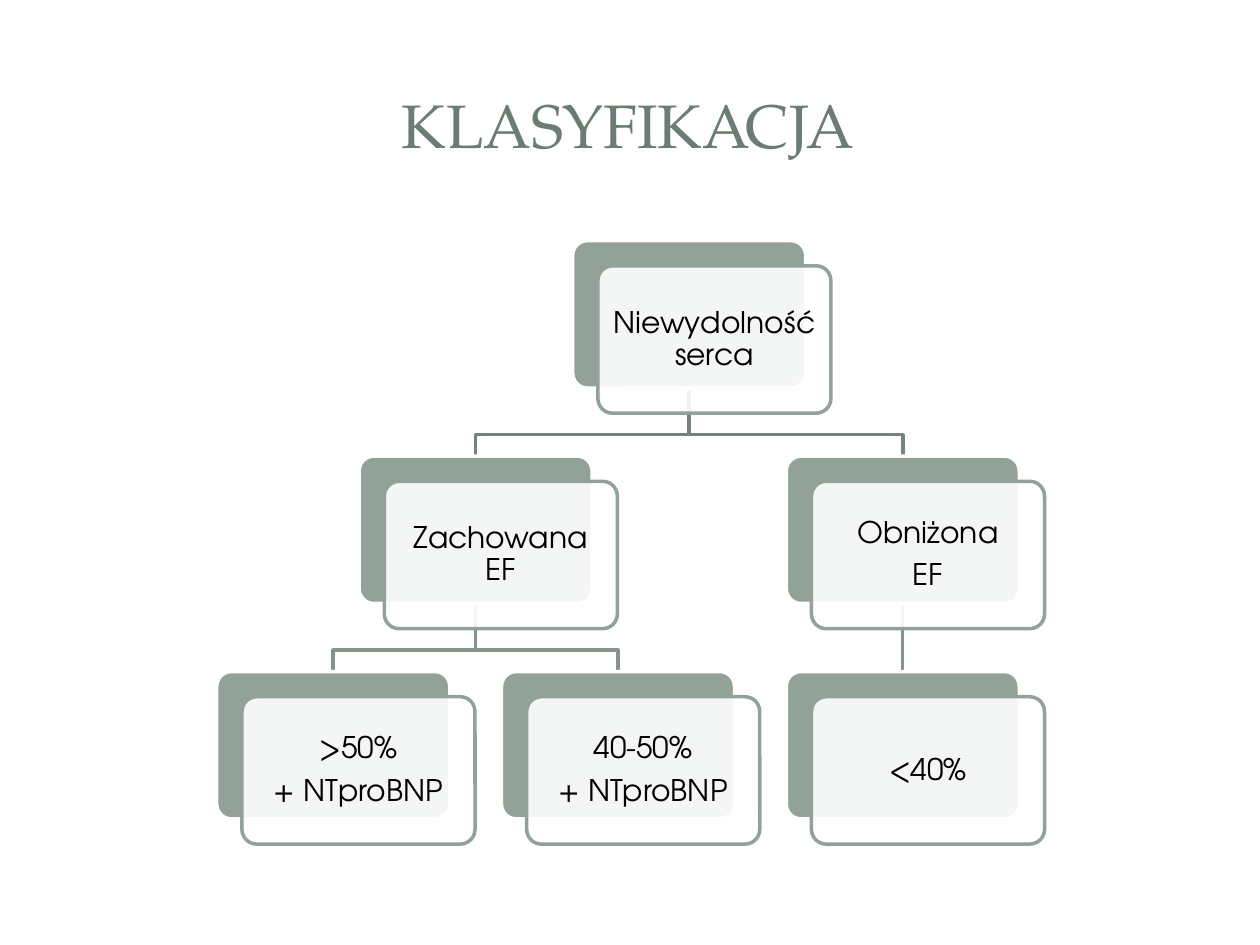
from lxml import etree
from pptx import Presentation
from pptx.dml.color import RGBColor
from pptx.enum.shapes import MSO_SHAPE
from pptx.enum.text import MSO_ANCHOR, PP_ALIGN
from pptx.oxml.ns import qn
from pptx.util import Inches, Pt

ROUNDED = MSO_SHAPE.ROUNDED_RECTANGLE
MIDDLE, CENTER = MSO_ANCHOR.MIDDLE, PP_ALIGN.CENTER

# Content: name -> (paragraphs, column, level, parent)
TITLE = "KLASYFIKACJA"
NODES = {
    "failure": (["Niewydolność serca"], 1.25, 0, None),
    "preserved": (["Zachowana EF"], 0.5, 1, "failure"),
    "over50": ([">50%", "+ NTproBNP"], 0, 2, "preserved"),
    "mid": (["40-50%", "+ NTproBNP"], 1, 2, "preserved"),
    "reduced": (["Obniżona", "EF"], 2, 1, "failure"),
    "under40": (["<40%"], 2, 2, "reduced"),
}

# Format
COLORS = {"title": "6B7D72", "card": "93A299", "white": "FFFFFF", "text": "000000"}
LINK_COLORS = {1: "76827B", 2: "85938B"}  # by level of the child
TITLE_FONT = {"name": "TeX Gyre Pagella", "size": Pt(35), "bold": False}
CARD_FONT = {"name": "TeX Gyre Adventor", "size": Pt(17)}
PARAGRAPH = {"alignment": CENTER, "line_spacing": 0.9,
             "space_before": Pt(0), "space_after": Pt(6)}
FRAME = {"word_wrap": True, "vertical_anchor": MIDDLE,
         **{f"margin_{side}": Inches(0.07) for side in ("left", "right", "top", "bottom")}}

# Grid, in inches
LEFT, TOP = 1.72, 1.91
COL_STEP, ROW_STEP = 2.26, 1.71
CARD_W, CARD_H = 1.85, 1.17
OFFSET = 0.2    # front card from back card
ELBOW = 0.17    # crossbar above the child


def rgb(name):
    return RGBColor.from_string(COLORS.get(name, name))


def apply(target, values):
    for key, value in values.items():
        setattr(target, key, value)


def place(name):
    _, column, level, _ = NODES[name]
    return LEFT + column * COL_STEP, TOP + level * ROW_STEP


def set_line(s, color):
    s.shadow.inherit = False
    s.line.color.rgb = rgb(color)
    s.line.width = Pt(2)


def add_text(tf, paragraphs, font, color):
    for i, text in enumerate(paragraphs):
        p = tf.paragraphs[0] if i == 0 else tf.add_paragraph()
        apply(p, PARAGRAPH)
        r = p.add_run()
        r.text = text
        apply(r.font, font)
        r.font.color.rgb = rgb(color)


def add_link(shapes, child):
    _, _, level, parent = NODES[child]
    (px, py), (cx, cy) = place(parent), place(child)
    px, cx = px + CARD_W / 2, cx + CARD_W / 2
    points = [(px, cy - ELBOW), (cx, cy - ELBOW), (cx, cy)]
    if px == cx:
        points = points[-1:]
    builder = shapes.build_freeform(Inches(px), Inches(py + CARD_H))
    builder.add_line_segments([(Inches(x), Inches(y)) for x, y in points], close=False)
    s = builder.convert_to_shape()
    s.fill.background()
    set_line(s, LINK_COLORS[level])


def add_card(shapes, x, y, fill, line):
    s = shapes.add_shape(ROUNDED, Inches(x), Inches(y), Inches(CARD_W), Inches(CARD_H))
    s.adjustments[0] = 0.1
    s.fill.solid()
    s.fill.fore_color.rgb = rgb(fill)
    set_line(s, line)
    return s


def add_node(shapes, name):
    x, y = place(name)
    add_card(shapes, x, y, "card", "white")
    front = add_card(shapes, x + OFFSET, y + OFFSET, "white", "card")
    fill = front._element.spPr.find(qn("a:solidFill"))
    etree.SubElement(fill[0], qn("a:alpha"), val="90000")
    apply(front.text_frame, FRAME)
    add_text(front.text_frame, NODES[name][0], CARD_FONT, "text")


def main():
    prs = Presentation()
    prs.slide_width, prs.slide_height = Inches(10), Inches(7.5)
    slide = prs.slides.add_slide(prs.slide_layouts[5])
    shapes = slide.shapes

    # Title
    title = shapes.title
    apply(title, {"left": Inches(0.47), "top": Inches(0.45),
                  "width": Inches(9.03), "height": Inches(1.14)})
    title.text_frame.vertical_anchor = MIDDLE
    add_text(title.text_frame, [TITLE], TITLE_FONT, "title")

    # Links lie behind the cards
    for name, (_, _, _, parent) in NODES.items():
        if parent:
            add_link(shapes, name)
    for name in NODES:
        add_node(shapes, name)

    prs.save("out.pptx")


if __name__ == "__main__":
    main()
